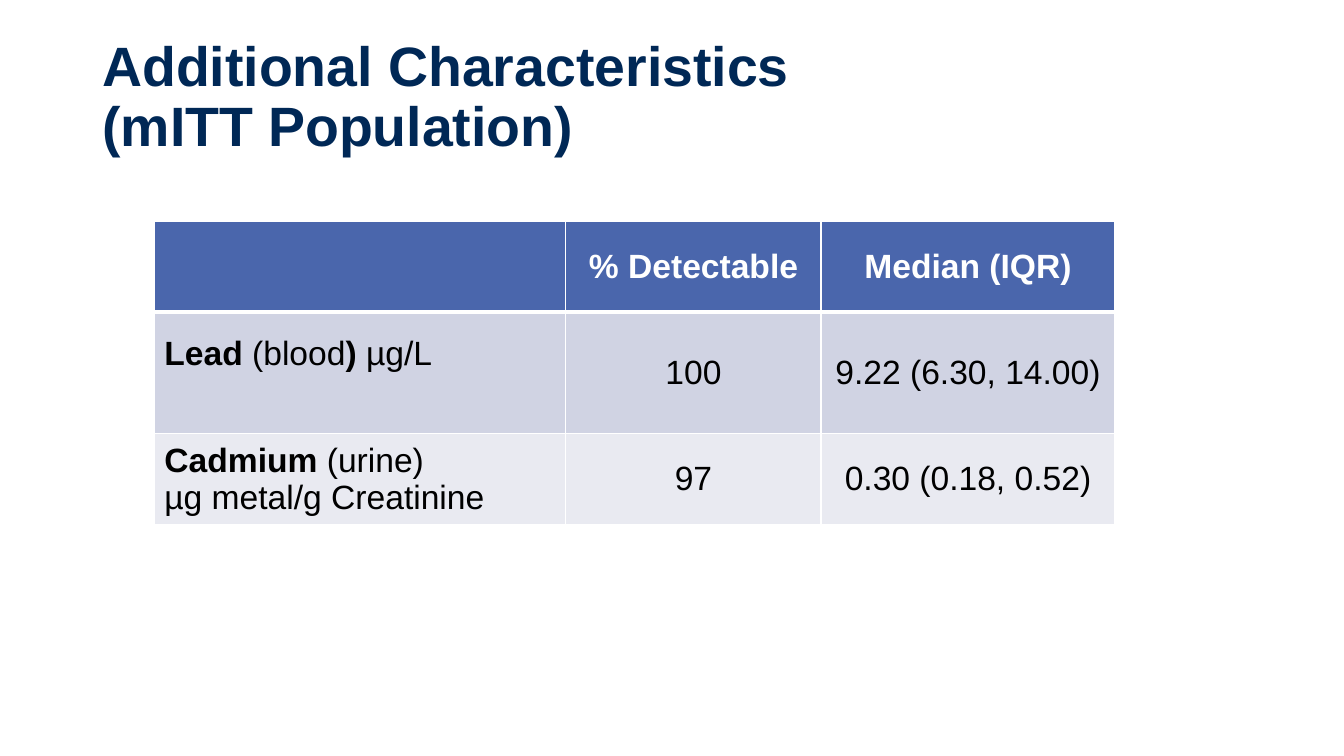
from dataclasses import dataclass

from lxml import etree
from pptx import Presentation
from pptx.dml.color import RGBColor
from pptx.enum.text import MSO_ANCHOR, PP_ALIGN
from pptx.oxml.ns import qn
from pptx.util import Emu, Pt

MIDDLE = MSO_ANCHOR.MIDDLE
LEFT, CENTER = PP_ALIGN.LEFT, PP_ALIGN.CENTER
FONT = "Arial"
EMU_PER_PX = 9525
COLORS = {
    "title": "002856",
    "header": "4A66AC",
    "band_dark": "D0D3E3",
    "band_light": "E9EAF1",
    "white": "FFFFFF",
    "black": "000000",
}
COLUMN_WIDTHS = (392, 243, 280)


@dataclass(frozen=True)
class Span:
    text: str
    bold: bool = False


@dataclass(frozen=True)
class Row:
    height: int
    fill: str
    text_color: str
    bottom_border: int
    cells: tuple[tuple[tuple[Span, ...], ...], ...]
    label_bottom_margin: int = 5


ROWS = (
    Row(86, "header", "white", 3, (
        (),
        ((Span("% Detectable", True),),),
        ((Span("Median (IQR)", True),),),
    )),
    Row(116, "band_dark", "black", 1, (
        ((Span("Lead ", True), Span("(blood"), Span(") ", True), Span("µg/L")),),
        ((Span("100"),),),
        ((Span("9.22 (6.30, 14.00)"),),),
    ), label_bottom_margin=40),
    Row(87, "band_light", "black", 1, (
        ((Span("Cadmium ", True), Span("(urine)")), (Span("µg metal/g Creatinine"),)),
        ((Span("97"),),),
        ((Span("0.30 (0.18, 0.52)"),),),
    )),
)


def px(length: int) -> Emu:
    return Emu(length * EMU_PER_PX)


def rgb(name: str) -> RGBColor:
    return RGBColor.from_string(COLORS[name])


def style_font(font, size: float, color: str) -> None:
    font.name = FONT
    font.size = Pt(size)
    font.color.rgb = rgb(color)


def add_borders(cell, bottom_width: int) -> None:
    """Draw white cell borders; call before the cell is filled."""
    properties = cell._tc.get_or_add_tcPr()
    for side, width in (("L", 1), ("R", 1), ("T", 1), ("B", bottom_width)):
        line = etree.SubElement(properties, qn(f"a:ln{side}"), w=str(Pt(width)))
        fill = etree.SubElement(line, qn("a:solidFill"))
        etree.SubElement(fill, qn("a:srgbClr"), val=COLORS["white"])


def fill_cell(cell, row: Row, lines: tuple[tuple[Span, ...], ...], is_label: bool) -> None:
    add_borders(cell, row.bottom_border)
    cell.fill.solid()
    cell.fill.fore_color.rgb = rgb(row.fill)
    cell.vertical_anchor = MIDDLE
    if is_label:
        cell.margin_bottom = px(row.label_bottom_margin)
    for index, spans in enumerate(lines):
        frame = cell.text_frame
        para = frame.add_paragraph() if index else frame.paragraphs[0]
        para.alignment = LEFT if is_label else CENTER
        style_font(para.font, 24, row.text_color)
        for span in spans:
            run = para.add_run()
            run.text = span.text
            run.font.bold = span.bold


def add_title(page) -> None:
    box = page.shapes.add_textbox(px(88), px(85), px(1134), px(73))
    frame = box.text_frame
    frame.word_wrap = True
    frame.vertical_anchor = MIDDLE
    frame.margin_bottom = px(60)
    para = frame.paragraphs[0]
    para.text = "Additional Characteristics\v(mITT Population)"
    para.line_spacing = 0.9
    style_font(para.font, 39.6, "title")
    para.font.bold = True


def add_characteristics_table(page) -> None:
    width, height = sum(COLUMN_WIDTHS), sum(row.height for row in ROWS)
    table = page.shapes.add_table(
        len(ROWS), len(COLUMN_WIDTHS), px(147), px(211), px(width), px(height)
    ).table
    for column, column_width in zip(table.columns, COLUMN_WIDTHS):
        column.width = px(column_width)
    for row_index, row in enumerate(ROWS):
        table.rows[row_index].height = px(row.height)
        for column_index, lines in enumerate(row.cells):
            fill_cell(table.cell(row_index, column_index), row, lines, column_index == 0)


def main() -> None:
    deck = Presentation()
    deck.slide_width, deck.slide_height = px(1280), px(720)
    page = deck.slides.add_slide(deck.slide_layouts[6])
    add_characteristics_table(page)
    add_title(page)
    deck.save("out.pptx")


if __name__ == "__main__":
    main()
